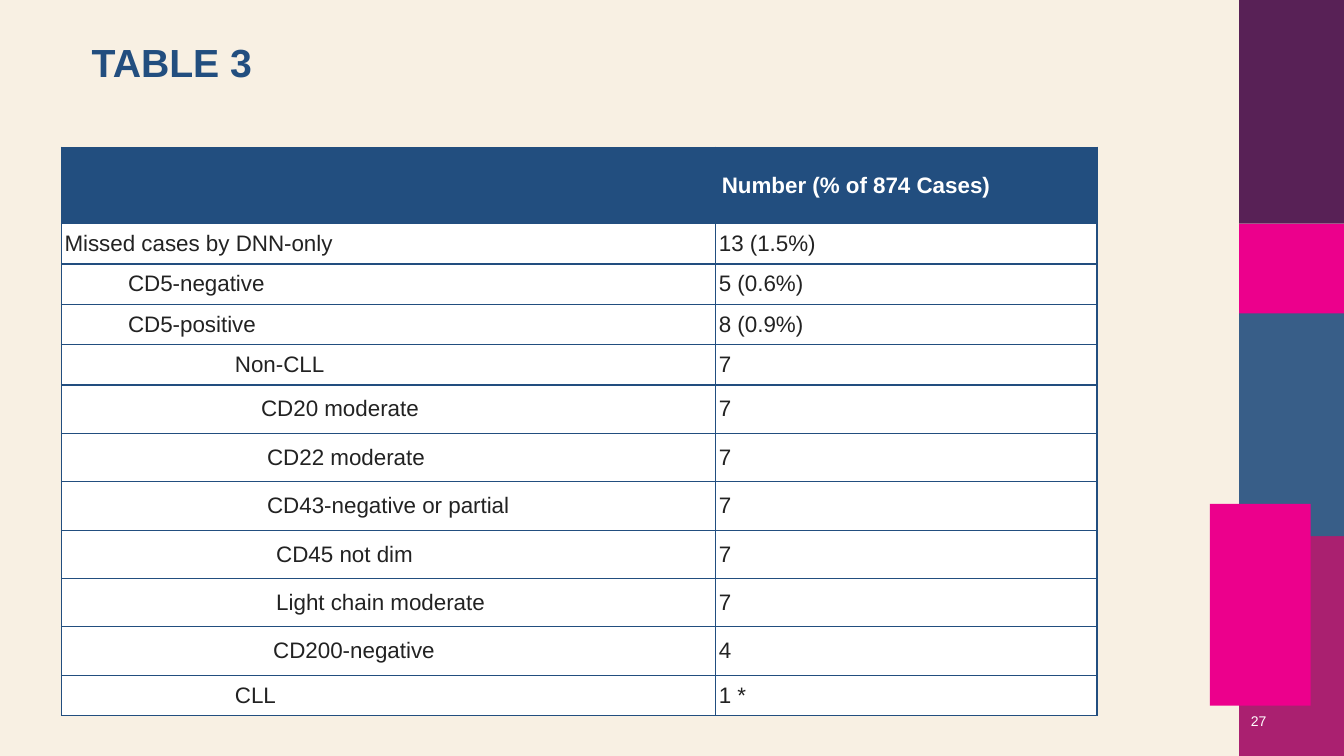
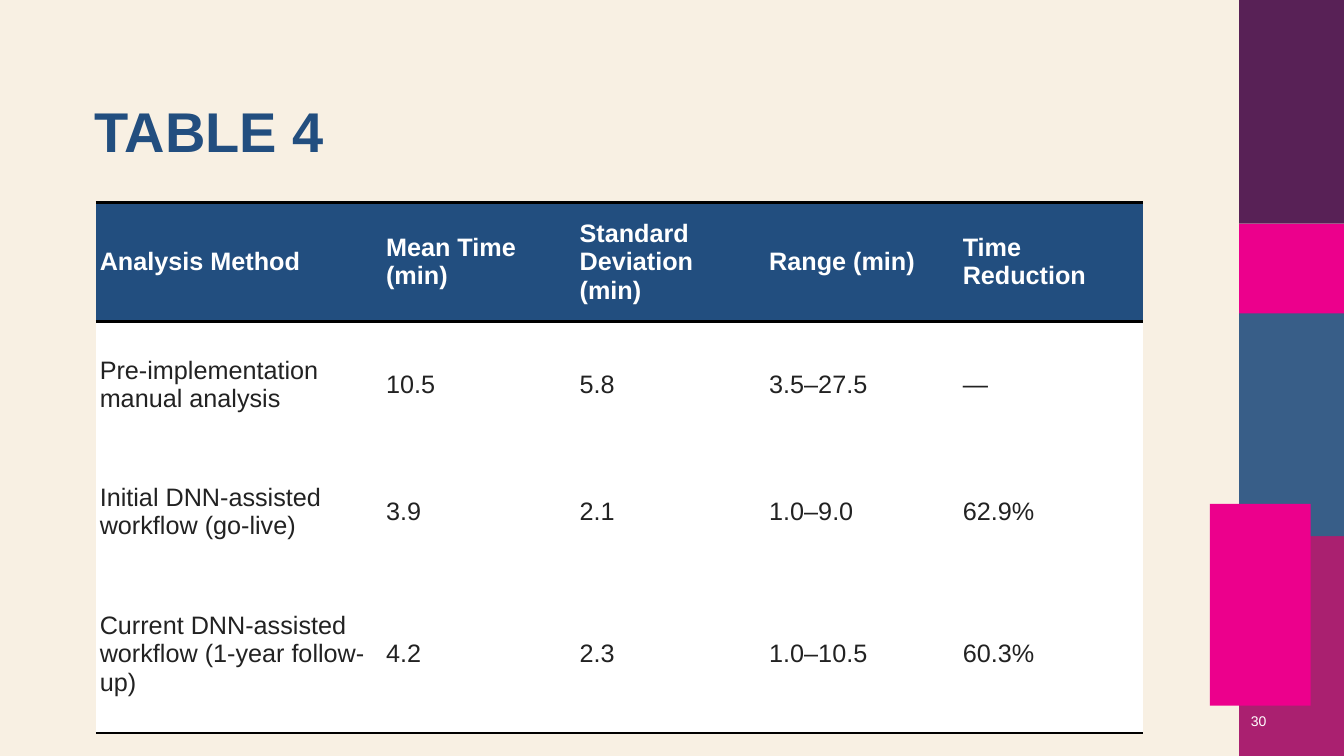
from dataclasses import dataclass
from math import cos, pi, sin

from lxml import etree
from pptx import Presentation
from pptx.dml.color import RGBColor
from pptx.enum.shapes import MSO_SHAPE
from pptx.enum.text import MSO_ANCHOR, MSO_AUTO_SIZE, PP_ALIGN
from pptx.oxml.ns import qn
from pptx.util import Inches, Pt

RECT = MSO_SHAPE.RECTANGLE
TOP, MIDDLE = MSO_ANCHOR.TOP, MSO_ANCHOR.MIDDLE
LEFT, RIGHT = PP_ALIGN.LEFT, PP_ALIGN.RIGHT
NO_AUTOFIT = MSO_AUTO_SIZE.NONE
PLAIN_TABLE = "{2D5ABB26-0587-4C30-8999-92F81FD0307C}"
TITLE_ONLY = 5


@dataclass(frozen=True)
class Theme:
    font: str = "Arial"
    cream: str = "F8F0E3"
    navy: str = "224E7F"
    plum: str = "582156"
    pink: str = "EC008C"
    blue: str = "385E88"
    berry: str = "AA2070"
    white: str = "FFFFFF"
    black: str = "000000"
    ink: str = "222222"
    title_size: int = 40
    small_title_size: int = 28
    table_size: int = 18
    small_table_size: int = 16
    number_size: int = 10


THEME = Theme()


def rgb(value):
    return RGBColor.from_string(value)


def write(tf, text, size, color, bold=False, align=LEFT, anchor=MIDDLE, spacing=None):
    tf.word_wrap = True
    tf.vertical_anchor = anchor
    p = tf.paragraphs[0]
    p.alignment = align
    p.line_spacing = spacing
    r = p.add_run()
    r.text = text
    r.font.name = THEME.font
    r.font.size = Pt(size)
    r.font.bold = bold
    r.font.color.rgb = rgb(color)
    return p


def set_borders(cell, sides, color, width):
    tc_pr = cell._tc.get_or_add_tcPr()
    for i, side in enumerate(x for x in "LRTB" if x in sides):
        ln = etree.Element(qn(f"a:ln{side}"), w=str(Pt(width)))
        fill = etree.SubElement(ln, qn("a:solidFill"))
        etree.SubElement(fill, qn("a:srgbClr"), val=color)
        tc_pr.insert(i, ln)


class Deck:
    def __init__(self, theme):
        self.theme = theme
        self.prs = Presentation()
        self.prs.slide_width, self.prs.slide_height = Inches(13.33), Inches(7.5)
        self.layout = self.prs.slide_layouts[TITLE_ONLY]
        self.paint(self.layout.background.fill, theme.cream)
        for ph in list(self.layout.placeholders)[1:]:
            ph.element.getparent().remove(ph.element)
        self.s = None

    def paint(self, fill, color):
        fill.solid()
        fill.fore_color.rgb = rgb(color)

    def slide(self, number):
        first = self.s is None
        self.s = self.prs.slides.add_slide(self.layout)
        if first:
            self.side_band()
        box = self.s.shapes.add_textbox(Inches(12.16), Inches(6.95), Inches(0.5), Inches(0.4))
        write(box.text_frame, str(number), self.theme.number_size, self.theme.white, align=RIGHT)

    def share(self, sp, color):
        self.paint(sp.fill, color)
        sp.line.fill.background()
        sp.shadow.inherit = False
        self.layout.shapes.element.append(sp.element)

    def side_band(self):
        t = self.theme
        blocks = [(5.28, 2.22, t.berry), (3.1, 2.22, t.blue), (0, 2.22, t.plum), (2.22, 0.89, t.pink)]
        for top, height, color in blocks:
            sp = self.s.shapes.add_shape(RECT, Inches(12.29), Inches(top), Inches(1.04), Inches(height))
            self.share(sp, color)
        x, y, steps = 12.3, 6.41, 60
        arc = [(x + sin(pi * i / steps), y - cos(pi * i / steps)) for i in range(steps + 1)]
        builder = self.s.shapes.build_freeform(*arc[0], scale=Inches(1))
        builder.add_line_segments(arc[1:], close=True)
        self.share(builder.convert_to_shape(), t.pink)

    def title(self, text, left, top, height, size):
        sp = self.s.shapes.title
        sp.left, sp.top, sp.width, sp.height = map(Inches, (left, top, 10.27, height))
        tf = sp.text_frame
        tf.auto_size = NO_AUTOFIT
        write(tf, text, size, self.theme.navy, bold=True, anchor=TOP, spacing=0.9)

    def table(self, rows, left, top, widths, heights, size, insets, header_insets, borders, indents=()):
        t = self.theme
        frame = self.s.shapes.add_table(len(rows), len(widths), Inches(left), Inches(top),
                                        Inches(sum(widths)), Inches(sum(heights)))
        next(frame.element.iter(qn("a:tableStyleId"))).text = PLAIN_TABLE
        table = frame.table
        for column, width in zip(table.columns, widths):
            column.width = Inches(width)
        for i, (row, height) in enumerate(zip(rows, heights)):
            table.rows[i].height = Inches(height)
            fill, color = (t.white, t.ink) if i else (t.navy, t.white)
            dx, dy = insets if i else header_insets
            for j, text in enumerate(row):
                cell = table.cell(i, j)
                self.paint(cell.fill, fill)
                set_borders(cell, *borders(i))
                cell.margin_left = cell.margin_right = Inches(dx)
                cell.margin_top = cell.margin_bottom = Inches(dy)
                cell.vertical_anchor = MIDDLE
                if text:
                    p = write(cell.text_frame, text, size, color, bold=i == 0)
                    if j == 0 and i and indents:
                        p._p.get_or_add_pPr().set("marL", str(Inches(indents[i - 1])))


def missed_cases(deck):
    t = deck.theme
    deck.slide(27)
    deck.title("TABLE 3", 0.81, 0.38, 1.17, t.small_title_size)
    cases = [
        (0, "Missed cases by DNN-only", "13 (1.5%)"),
        (0.63, "CD5-negative", "5 (0.6%)"),
        (0.63, "CD5-positive", "8 (0.9%)"),
        (1.69, "Non-CLL", "7"),
        (1.95, "CD20 moderate", "7"),
        (2.01, "CD22 moderate", "7"),
        (2.01, "CD43-negative or partial", "7"),
        (2.1, "CD45 not dim", "7"),
        (2.1, "Light chain moderate", "7"),
        (2.07, "CD200-negative", "4"),
        (1.69, "CLL", "1 *"),
    ]
    rows = [("", "Number (% of 874 Cases)")] + [case[1:] for case in cases]
    deck.table(rows, 0.61, 1.46, [6.49, 3.78], [0.76] + [0.4] * 4 + [0.48] * 6 + [0.4],
               t.small_table_size, (0.03, 0.02), (0.06, 0.03),
               lambda i: ("LRTB", t.navy, 1), [case[0] for case in cases])


def time_savings(deck):
    t = deck.theme
    deck.slide(30)
    deck.title("TABLE 4", 0.84, 0.98, 1.49, t.title_size)
    rows = [
        ("Analysis Method", "Mean Time (min)", "Standard Deviation (min)", "Range (min)", "Time Reduction"),
        ("Pre-implementation manual analysis", "10.5", "5.8", "3.5–27.5", "—"),
        ("Initial DNN-assisted workflow (go-live)", "3.9", "2.1", "1.0–9.0", "62.9%"),
        ("Current DNN-assisted workflow (1-year follow-up)", "4.2", "2.3", "1.0–10.5", "60.3%"),
    ]
    sides = {0: "TB", len(rows) - 1: "B"}
    deck.table(rows, 0.95, 2.01, [2.84, 1.92, 1.88, 1.92, 1.83], [1.18, 1.26, 1.26, 1.56],
               t.table_size, (0.04, 0.03), (0.04, 0.04),
               lambda i: (sides.get(i, ""), t.black, 2))


def main():
    deck = Deck(THEME)
    missed_cases(deck)
    time_savings(deck)
    deck.prs.save("out.pptx")


if __name__ == "__main__":
    main()
